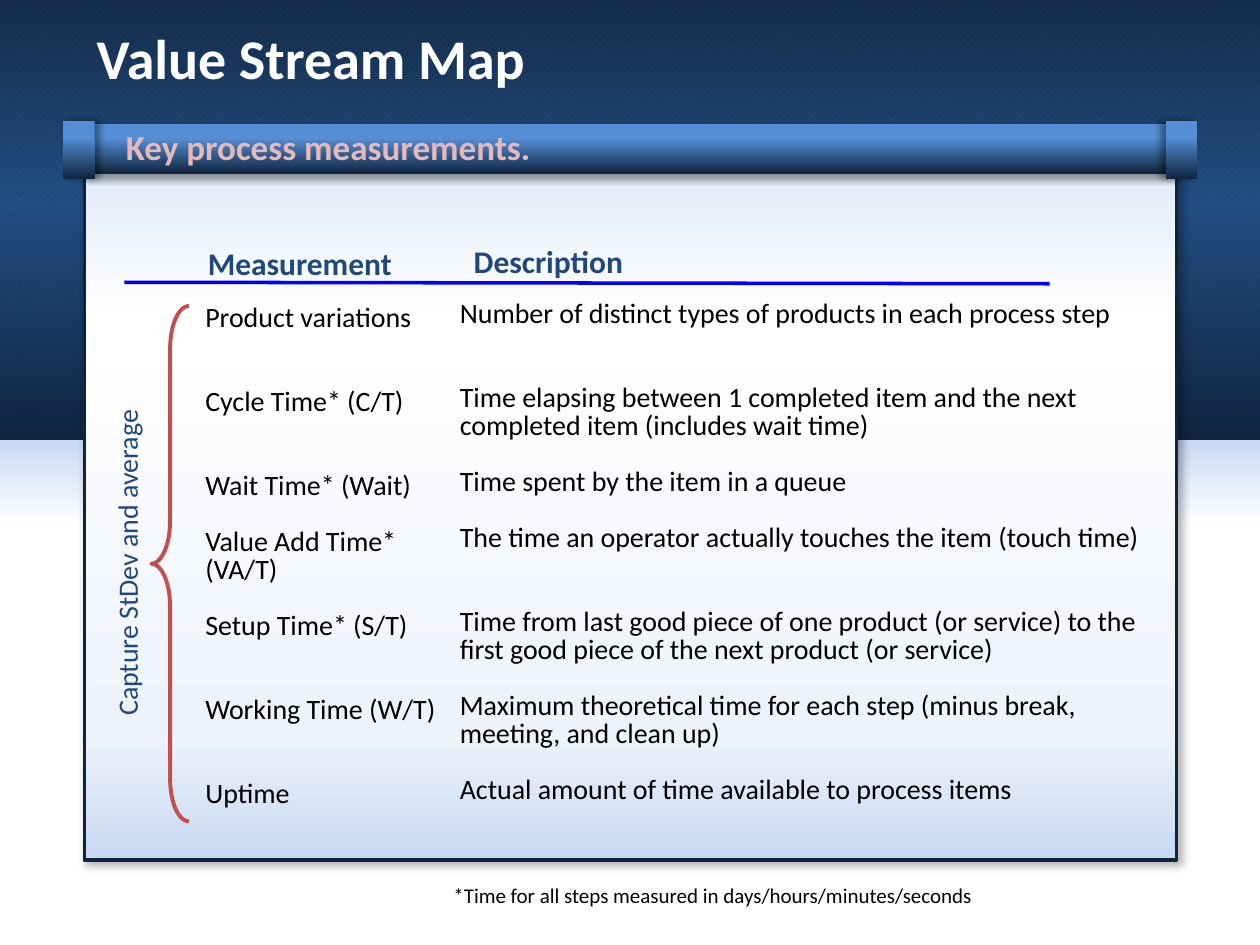
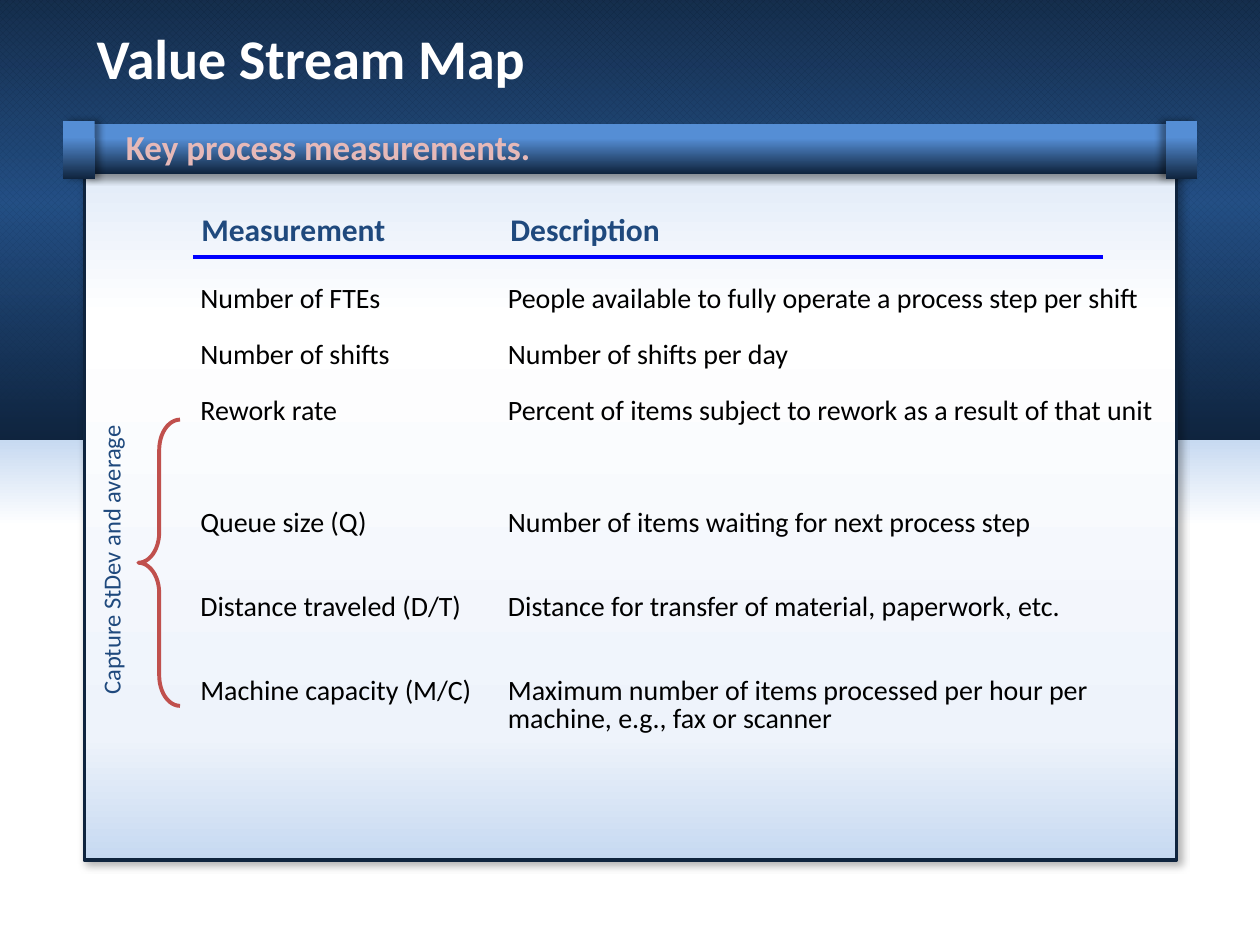
"""Build two value stream map slides that list the key process measurements."""
from lxml.etree import SubElement
from pptx import Presentation
from pptx.dml.color import RGBColor
from pptx.enum.dml import MSO_PATTERN_TYPE as Pattern
from pptx.enum.shapes import MSO_CONNECTOR as Connector, MSO_SHAPE as Shape
from pptx.enum.text import MSO_ANCHOR as Anchor, MSO_AUTO_SIZE as AutoSize, PP_ALIGN as Align
from pptx.oxml.ns import qn
from pptx.util import Cm, Pt

FONT = "Calibri"
NAVY, BLUE, SKY, WHITE, BLACK = "0F243E", "1F497D", "558ED5", "FFFFFF", "000000"
PINK, RED, RULE_BLUE = "E6B9B8", "C0504D", "0000FF"
ROW_LINE = 16

PROCESS_TIMES = dict(
    headings=[("Description", (9.55, 4.88, 8.03, 0.76)),
              ("Measurement", (4.19, 4.93, 6.17, 0.76))],
    rule=(2.51, 5.69, 21.16, 5.72),
    columns=[
        ((4.14, 6.15, 5.18, 10.26), [
            (0, "Product variations"),
            (2, "Cycle Time* (C/T)"),
            (2, "Wait Time* (Wait)"),
            (1, "Value Add Time* (VA/T)"),
            (1, "Setup Time* (S/T)"),
            (2, "Working Time (W/T)"),
            (2, "Uptime")]),
        ((9.27, 6.07, 14.22, 10.26), [
            (0, "Number of distinct types of products in each process step"),
            (2, "Time elapsing between 1 completed item and the next "
                "completed item (includes wait time)"),
            (1, "Time spent by the item in a queue"),
            (1, "The time an operator actually touches the item (touch time)"),
            (2, "Time from last good piece of one product (or service) to the "
                "first good piece of the next product (or service)"),
            (1, "Maximum theoretical time for each step (minus break, "
                "meeting, and clean up)"),
            (1, "Actual amount of time available to process items")])],
    brace=((3.05, 6.17, 0.76, 10.39), 1.13),
    side_label=((-2.29, 11, 9.7, 0.69), 16),
    footnote="*Time for all steps measured in days/hours/minutes/seconds")

PROCESS_COUNTS = dict(
    headings=[("Description", (10.29, 4.24, 8.03, 0.76)),
              ("Measurement", (4.06, 4.24, 5.23, 0.76))],
    rule=(3.89, 5.18, 22.23, 5.18),
    columns=[
        ((4.04, 5.77, 6.05, 8.56), [
            (0, "Number of FTEs"),
            (1, "Number of shifts"),
            (1, "Rework rate"),
            (3, "Queue size (Q)"),
            (2, "Distance traveled (D/T)"),
            (2, "Machine capacity (M/C)")]),
        ((10.24, 5.77, 13.26, 9.12), [
            (0, "People available to fully operate a process step per shift"),
            (1, "Number of shifts per day"),
            (1, "Percent of items subject to rework as a result of that unit"),
            (3, "Number of items waiting for next process step"),
            (2, "Distance for transfer of material, paperwork, etc."),
            (2, "Maximum number of items processed per hour per "
                "machine, e.g., fax or scanner")])],
    brace=((2.79, 8.46, 0.84, 5.77), 0.73),
    side_label=((-2.62, 11, 9.7, 0.58), 14),
    footnote=None)


def rgb(hex_color):
    """Turn a hex string into a colour."""
    return RGBColor.from_string(hex_color)


def lengths(box):
    """Turn centimetres into slide lengths."""
    return [Cm(value) for value in box]


def add_color(parent, hex_color, alpha):
    """Add a colour element with an opacity in percent."""
    color = SubElement(parent, qn("a:srgbClr"), val=hex_color)
    if alpha < 100:
        SubElement(color, qn("a:alpha"), val=str(alpha * 1000))


def fill_gradient(shape, stops):
    """Fill a shape from top to bottom with (position, colour, opacity) stops."""
    shape.fill.gradient()
    shape.fill.gradient_angle = 270
    stop_list = shape.element.spPr.find(qn("a:gradFill")).find(qn("a:gsLst"))
    stop_list.clear()
    for position, color, alpha in stops:
        stop = SubElement(stop_list, qn("a:gs"), pos=str(position * 1000))
        add_color(stop, color, alpha)


def add_shadow(shape, alpha, blur, distance, angle):
    """Give a shape a soft outer shadow."""
    effects = shape.element.spPr.find(qn("a:effectLst"))
    shadow = SubElement(effects, qn("a:outerShdw"), blurRad=str(Pt(blur)),
                        dist=str(Pt(distance)), dir=str(angle * 60000),
                        algn="ctr", rotWithShape="0")
    add_color(shadow, BLACK, alpha)


def add_plain_shape(slide, kind, box):
    """Add a preset shape without line or shadow."""
    shape = slide.shapes.add_shape(kind, *lengths(box))
    shape.shadow.inherit = False
    shape.line.fill.background()
    return shape


def add_band(slide, box, stops, kind=Shape.RECTANGLE):
    """Add a shape with a vertical gradient."""
    band = add_plain_shape(slide, kind, box)
    fill_gradient(band, stops)
    return band


def add_frame(slide, layout):
    """Draw the backdrop, panel and ribbon once and hand them to the layout."""
    first = len(slide.shapes)
    header_box = (-0.08, -0.03, 25.5, 8.89)
    add_band(slide, (-0.03, 7.19, 25.48, 11.76),
             [(0, "8EB4E3", 100), (29, WHITE, 100), (100, WHITE, 100)])
    header = add_plain_shape(slide, Shape.RECTANGLE, header_box)
    header.fill.patterned()
    header.fill.pattern = Pattern.OUTLINED_DIAMOND
    header.fill.fore_color.rgb = rgb(NAVY)
    header.fill.back_color.rgb = rgb(SKY)
    add_band(slide, header_box, [(0, NAVY, 90), (46, BLUE, 90), (100, NAVY, 100)])

    panel = add_band(slide, (1.7, 2.74, 22.02, 14.6),
                     [(0, "DAE6F6", 100), (25, WHITE, 100),
                      (83, "EEF3FB", 100), (100, "C6D9F1", 100)],
                     Shape.ROUNDED_RECTANGLE)
    panel.adjustments[0] = 0
    panel.line.color.rgb = rgb(NAVY)
    panel.line.width = Pt(2)
    add_shadow(panel, 30, 4.5, 2.6, 53)

    for box, angle in (((1.7, 2.51, 22.02, 0.99), 90),
                       ((1.27, 2.44, 0.64, 1.17), 0),
                       ((23.5, 2.44, 0.64, 1.17), 180)):
        ribbon_part = add_band(slide, box, [(28, SKY, 100), (100, NAVY, 100)])
        add_shadow(ribbon_part, 40, 4, 3, angle)

    layout_tree = layout.shapes.element
    for order, part in enumerate(list(slide.shapes)[first:]):
        part.element.nvSpPr.cNvPr.id = 20 + order
        layout_tree.insert(2 + order, part.element)


def add_run(paragraph, text, size, color, bold=False):
    """Add one formatted run."""
    run = paragraph.add_run()
    run.text = text
    font = run.font
    font.name, font.size, font.bold = FONT, Pt(size), bold
    font.color.rgb = rgb(color)


def prepare_frame(frame, anchor, margin=0):
    """Make a text frame wrap at a fixed size."""
    frame.word_wrap = True
    frame.auto_size = AutoSize.NONE
    frame.vertical_anchor = anchor
    frame.margin_left = frame.margin_right = Cm(margin)
    frame.margin_top = frame.margin_bottom = Cm(margin / 2)


def place(placeholder, box):
    """Move a placeholder."""
    (placeholder.left, placeholder.top,
     placeholder.width, placeholder.height) = lengths(box)


def set_title(slide, text):
    """Fill the title placeholder."""
    title = slide.shapes.title
    place(title, (1.7, 0.33, 22.02, 1.63))
    prepare_frame(title.text_frame, Anchor.BOTTOM, 0.25)
    paragraph = title.text_frame.paragraphs[0]
    paragraph.alignment = Align.LEFT
    add_run(paragraph, text, 32, WHITE, True)


def add_label(slide, text, box, size, color, bold=False, anchor=Anchor.TOP, align=Align.LEFT):
    """Add a one-line text box."""
    label = slide.shapes.add_textbox(*lengths(box))
    prepare_frame(label.text_frame, anchor)
    paragraph = label.text_frame.paragraphs[0]
    paragraph.alignment = align
    add_run(paragraph, text, size, color, bold)
    return label


def fill_column(placeholder, box, entries):
    """Fill a body placeholder with (lines skipped before, text) entries."""
    place(placeholder, box)
    frame = placeholder.text_frame
    prepare_frame(frame, Anchor.TOP)
    for order, (skipped, text) in enumerate(entries):
        paragraph = frame.add_paragraph() if order else frame.paragraphs[0]
        properties = paragraph._p.get_or_add_pPr()
        properties.set("marL", "0")
        properties.set("indent", "0")
        SubElement(properties, qn("a:buNone"))
        paragraph.alignment = Align.LEFT
        paragraph.line_spacing = Pt(ROW_LINE)
        paragraph.space_before = Pt(skipped * ROW_LINE)
        paragraph.space_after = Pt(0)
        add_run(paragraph, text, 16, BLACK)


def add_rule(slide, ends):
    """Add the line under the column headings."""
    rule = slide.shapes.add_connector(Connector.STRAIGHT, *lengths(ends))
    rule.line.color.rgb = rgb(RULE_BLUE)
    rule.line.width = Pt(2)
    SubElement(rule.element.spPr, qn("a:effectLst"))


def add_brace(slide, box, curl):
    """Add the brace that groups the averaged measurements."""
    brace = add_plain_shape(slide, Shape.LEFT_BRACE, box)
    brace.adjustments[0] = curl
    brace.fill.background()
    brace.line.color.rgb = rgb(RED)
    brace.line.width = Pt(2.25)


def fill_slide(slide, content):
    """Put one set of measurements on a slide."""
    set_title(slide, "Value Stream Map")
    add_label(slide, "Key process measurements.", (2.54, 2.54, 19.89, 0.84), 20, PINK, True)
    for heading, box in content["headings"]:
        add_label(slide, heading, box, 18, BLUE, True, Anchor.BOTTOM)
    add_rule(slide, content["rule"])
    for idx, (box, entries) in enumerate(content["columns"], 1):
        fill_column(slide.placeholders[idx], box, entries)
    add_brace(slide, *content["brace"])
    side_box, side_size = content["side_label"]
    side_label = add_label(slide, "Capture StDev and average", side_box,
                           side_size, BLUE, align=Align.CENTER)
    side_label.rotation = 270
    if content["footnote"]:
        add_label(slide, content["footnote"], (9.14, 17.78, 14.2, 0.51), 12, BLACK,
                  anchor=Anchor.BOTTOM)


def main():
    """Build and save the presentation."""
    deck = Presentation()
    deck.slide_width, deck.slide_height = Cm(25.4), Cm(19.05)
    layout = deck.slide_layouts.get_by_name("Two Content")
    slides = [deck.slides.add_slide(layout) for _ in range(2)]
    add_frame(slides[0], layout)
    for slide, content in zip(slides, (PROCESS_TIMES, PROCESS_COUNTS)):
        fill_slide(slide, content)
    deck.save("out.pptx")


if __name__ == "__main__":
    main()
